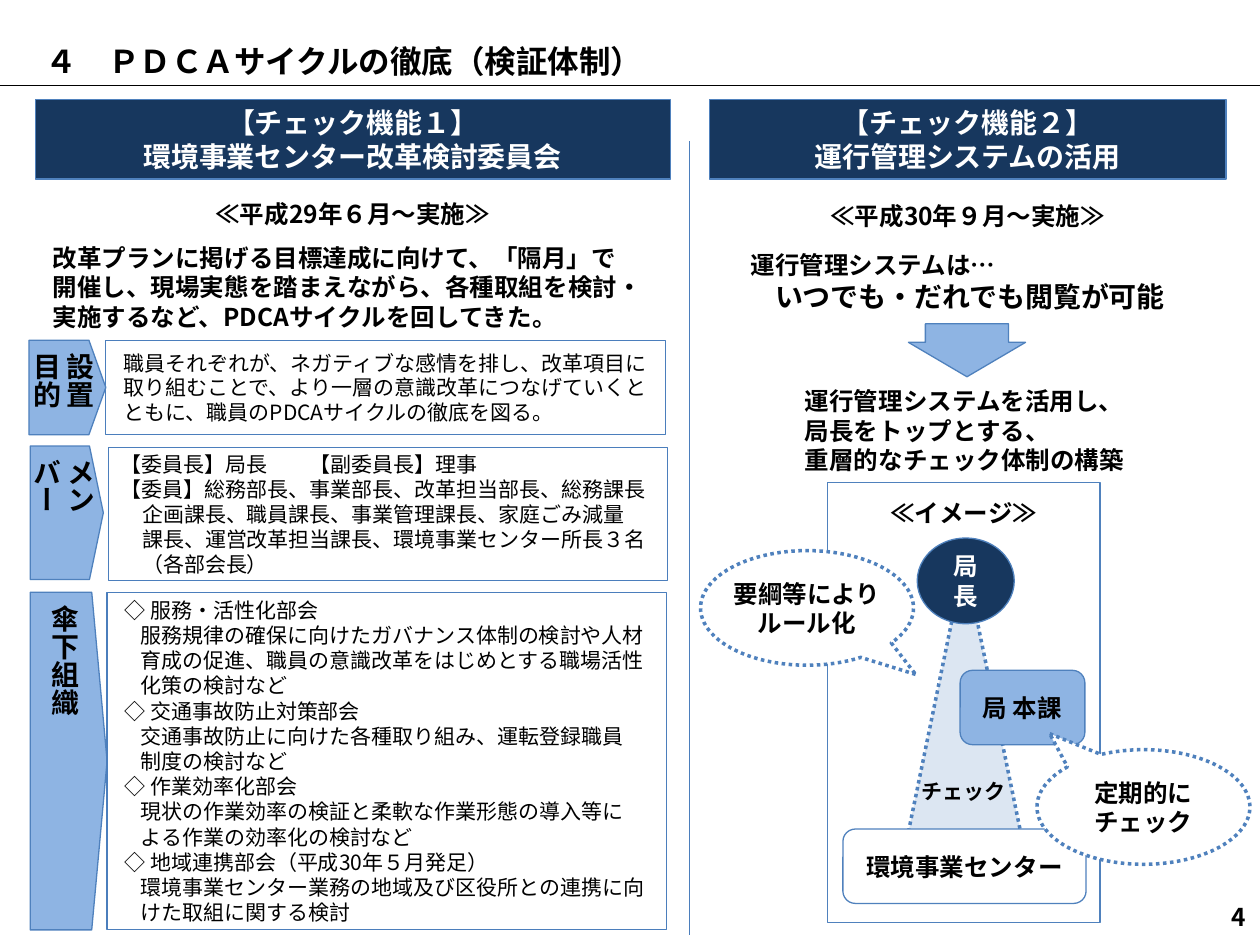
from lxml.etree import SubElement
from pptx import Presentation
from pptx.dml.color import RGBColor
from pptx.enum.dml import MSO_LINE
from pptx.enum.shapes import MSO_CONNECTOR, MSO_SHAPE as SHP
from pptx.enum.text import MSO_ANCHOR as ANC, PP_ALIGN as AL
from pptx.oxml.ns import qn
from pptx.util import Inches, Pt

BLACK = RGBColor(0x00, 0x00, 0x00)
WHITE = RGBColor(0xFF, 0xFF, 0xFF)
NAVY = RGBColor(0x17, 0x37, 0x5E)
SKY = RGBColor(0x8E, 0xB4, 0xE3)
PALE = RGBColor(0xDC, 0xE6, 0xF2)
EDGE = RGBColor(0x4F, 0x81, 0xBD)
RULE = RGBColor(0x4B, 0x7E, 0xBC)
FONT = "Noto Sans CJK JP"
COLS, ROWS = 100, 75


class Deck:
    def __init__(self):
        self.prs = Presentation()
        self.prs.slide_width, self.prs.slide_height = Inches(10), Inches(7.5)
        self.s = self.prs.slides.add_slide(self.prs.slide_layouts[6])
        self.col = self.prs.slide_width / COLS
        self.row = self.prs.slide_height / ROWS

    def box(self, x, y, w, h):
        return [round(v * u) for v, u in zip((x, y, w, h), (self.col, self.row) * 2)]

    def fill_text(self, sp, paras, inset=(0.1, 0.05), anchor=ANC.MIDDLE, vert=None, **style):
        tf = sp.text_frame
        frame = {"word_wrap": True, "vertical_anchor": anchor,
                 "margin_left": Inches(inset[0]), "margin_right": Inches(inset[0]),
                 "margin_top": Inches(inset[1]), "margin_bottom": Inches(inset[1])}
        for name, value in frame.items():
            setattr(tf, name, value)
        if vert:
            tf._txBody.bodyPr.set("vert", vert)
        for i, para in enumerate(paras):
            text, own = para if isinstance(para, tuple) else (para, {})
            p = tf.paragraphs[0] if i == 0 else tf.add_paragraph()
            self.paragraph(p, text, **{**style, **own})

    def paragraph(self, p, text, size=14, bold=True, color=BLACK, align=AL.CENTER,
                  indent=0, tab=None, spacing=None, before=0):
        layout = {"alignment": align, "space_before": Pt(before),
                  "line_spacing": Pt(spacing) if spacing else None}
        for name, value in layout.items():
            setattr(p, name, value)
        pPr = p._p.get_or_add_pPr()
        pPr.set("marL", str(Inches(indent)))
        if tab:
            tabs = SubElement(pPr, qn("a:tabLst"))
            SubElement(tabs, qn("a:tab"), pos=str(Inches(tab)), algn="l")
        r = p.add_run()
        r.text = text
        for name, value in {"name": FONT, "size": Pt(size), "bold": bold}.items():
            setattr(r.font, name, value)
        r.font.color.rgb = color
        SubElement(r._r.get_or_add_rPr(), qn("a:ea"), typeface=FONT)

    def text(self, at, paras, **style):
        self.fill_text(self.s.shapes.add_textbox(*self.box(*at)), paras, **style)

    def shape(self, kind, at, paras=(), fill=None, edge=EDGE, dotted=False, adj=(), **style):
        sp = self.s.shapes.add_shape(kind, *self.box(*at))
        sp.shadow.inherit = False
        for i, value in enumerate(adj):
            sp.adjustments[i] = value
        if fill is None:
            sp.fill.background()
        else:
            sp.fill.solid()
            sp.fill.fore_color.rgb = fill
        sp.line.color.rgb = edge
        sp.line.width = Pt(2 if dotted else 0.75)
        if dotted:
            sp.line.dash_style = MSO_LINE.ROUND_DOT
        self.fill_text(sp, paras, **style)

    def line(self, start, end, color):
        x1, y1, x2, y2 = self.box(*start, *end)
        c = self.s.shapes.add_connector(MSO_CONNECTOR.STRAIGHT, x1, y1, x2, y2)
        c.line.color.rgb = color
        c.line.width = Pt(0.75)
        SubElement(c._element.spPr, qn("a:effectLst"))

    def heading(self, x, w, paras):
        self.shape(SHP.FLOWCHART_PROCESS, (x, 7.9, w, 6.3), paras, fill=NAVY,
                   size=16, color=WHITE)

    def panel(self, at, paras, **style):
        self.shape(SHP.RECTANGLE, at, paras, fill=WHITE, edge=RULE, size=12,
                   bold=False, align=AL.LEFT, **style)

    def label(self, at, text, tip):
        self.shape(SHP.PENTAGON, at, [text], fill=SKY, adj=[tip], size=16, vert="eaVert")

    def callout(self, at, paras, adj):
        self.shape(SHP.OVAL_CALLOUT, at, paras, fill=WHITE, dotted=True, adj=adj,
                   inset=(0, 0.05))


def indented(lines, indent=0.17):
    return [(line, {"indent": indent}) for line in lines]


SECTIONS = {
    "◇ 服務・活性化部会": [
        "服務規律の確保に向けたガバナンス体制の検討や人材",
        "育成の促進、職員の意識改革をはじめとする職場活性",
        "化策の検討など"],
    "◇ 交通事故防止対策部会": [
        "交通事故防止に向けた各種取り組み、運転登録職員",
        "制度の検討など"],
    "◇ 作業効率化部会": [
        "現状の作業効率の検証と柔軟な作業形態の導入等に",
        "よる作業の効率化の検討など"],
    "◇ 地域連携部会（平成30年５月発足）": [
        "環境事業センター業務の地域及び区役所との連携に向",
        "けた取組に関する検討"],
}


def committee(d):
    d.heading(2.8, 50.4, ["【チェック機能１】", "環境事業センター改革検討委員会"])
    d.panel((8.4, 27, 44.4, 7.5),
            ["職員それぞれが、ネガティブな感情を排し、改革項目に取り組むことで、"
             "より一層の意識改革につなげていくとともに、職員のPDCAサイクルの徹底を図る。"],
            inset=(0.14, 0.04), spacing=14)
    d.panel((8.6, 35.5, 44.4, 10.6),
            [("【委員長】局長\t【副委員長】理事", {"tab": 1.5}),
             "【委員】総務部長、事業部長、改革担当部長、総務課長"]
            + indented(["企画課長、職員課長、事業管理課長、家庭ごみ減量",
                        "課長、運営改革担当課長、環境事業センター所長３名",
                        "（各部会長）"]),
            inset=(0.1, 0.08))
    d.label((2.3, 27, 6.1, 7.5), "設置目的", 0.22)
    d.label((2.4, 35.4, 5.8, 10.6), "メンバー", 0.19)
    d.label((2.4, 47, 6.1, 26.8), "傘下組織", 0.2)
    groups = []
    for name, lines in SECTIONS.items():
        groups += indented([name], 0.04) + indented(lines)
    d.panel((8.5, 47, 44.4, 26.8), groups, inset=(0.1, 0.08))
    d.text((2.8, 15, 50.4, 12.1),
           [("≪平成29年６月～実施≫", {"align": AL.CENTER}),
            ("改革プランに掲げる目標達成に向けて、「隔月」で", {"indent": 0.04, "before": 8})]
           + indented(["開催し、現場実態を踏まえながら、各種取組を検討・",
                       "実施するなど、PDCAサイクルを回してきた。"], 0.04),
           align=AL.LEFT)


def monitoring(d):
    d.heading(56.3, 41, ["【チェック機能２】", "運行管理システムの活用"])
    d.text((62.9, 29.3, 27.6, 9.7),
           ["運行管理システムを活用し、", "局長をトップとする、", "重層的なチェック体制の構築"],
           align=AL.LEFT)
    d.text((56.7, 18.5, 40.6, 7.7),
           [("運行管理システムは…", {"align": AL.LEFT, "indent": 0.19}),
            ("いつでも・だれでも閲覧が可能", {"size": 16})])
    d.shape(SHP.DOWN_ARROW, (72.1, 25.7, 9.3, 4.2), fill=SKY, adj=[0.71, 0.65])
    d.shape(SHP.ISOSCELES_TRIANGLE, (71.2, 44.4, 10.7, 26), fill=PALE, dotted=True)
    d.shape(SHP.OVAL, (72.8, 42.7, 7.7, 6.8), ["局長"], fill=NAVY, color=WHITE)
    for at, name, fill in [((76.2, 53.2, 9.9, 5.9), "局 本課", SKY),
                           ((66.9, 65.8, 19.3, 5.9), "環境事業センター", WHITE)]:
        d.shape(SHP.FLOWCHART_ALTERNATE_PROCESS, at, [name], fill=fill)
    d.text((69.8, 60.5, 13.4, 4.6), ["チェック"], size=12)
    d.shape(SHP.RECTANGLE, (65.7, 38.3, 21.6, 34.9), ["≪イメージ≫"],
            anchor=ANC.TOP, inset=(0.04, 0.12))
    d.callout((55.6, 43.7, 16.9, 9.1), ["要綱等によりルール化"], (0.51, 0.58))
    d.callout((82.3, 59.5, 16.9, 9.1), ["定期的に", "チェック"], (-0.44, -0.64))
    d.text((56.3, 14.7, 41, 4.8), ["≪平成30年９月～実施≫"])


def main():
    d = Deck()
    d.line((0, 6.8), (100, 6.8), BLACK)
    d.text((0.1, 2.9, 99.9, 3.9), ["４　ＰＤＣＡサイクルの徹底（検証体制）"],
           size=18, align=AL.LEFT, indent=0.25)
    d.text((94.8, 70.8, 5.1, 3.9), ["4"], align=AL.RIGHT)
    d.line((54.7, 74.2), (54.7, 11.2), RULE)
    committee(d)
    monitoring(d)
    d.prs.save("out.pptx")


if __name__ == "__main__":
    main()
